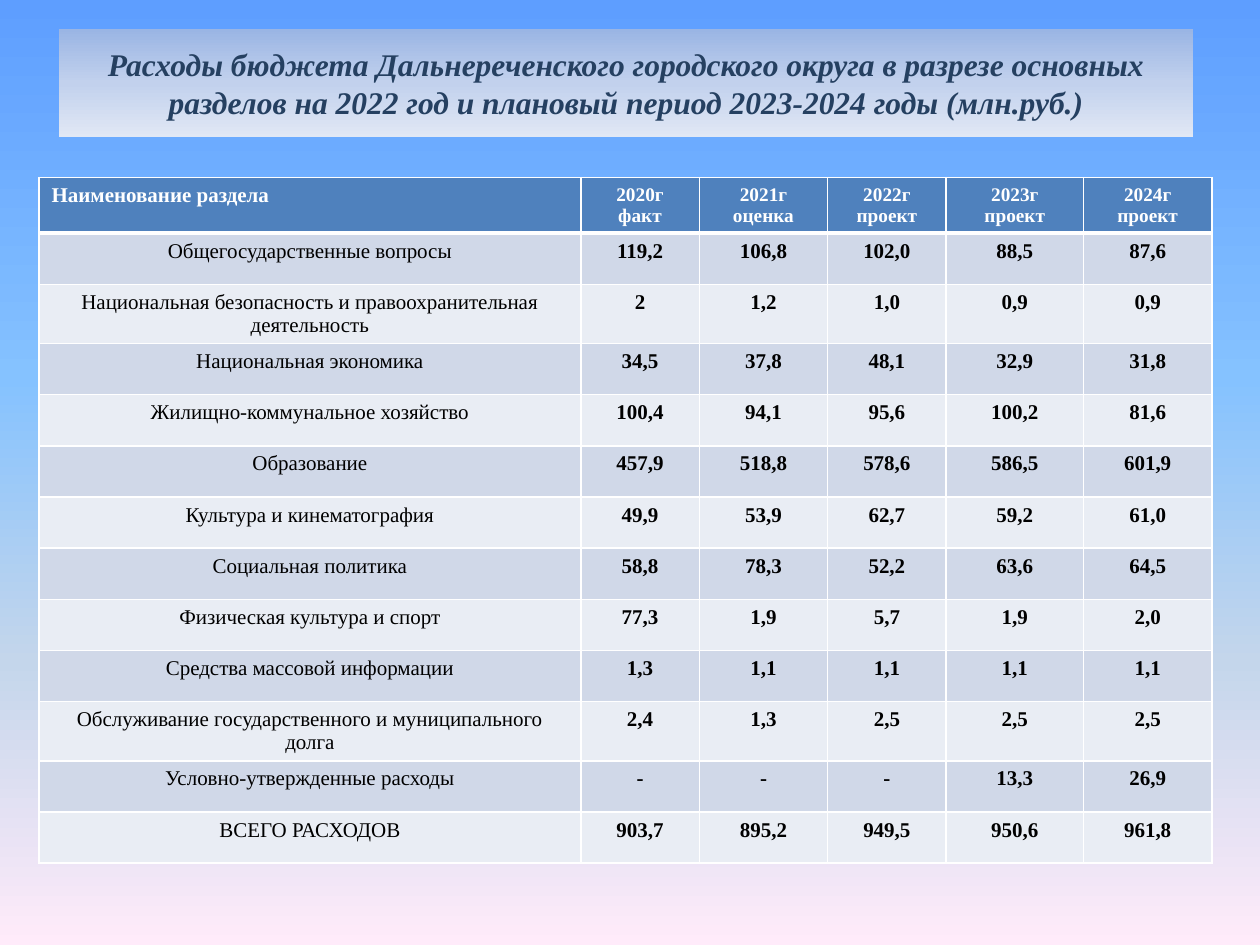
from lxml.etree import SubElement as Sub
from pptx import Presentation as Deck
from pptx.dml.color import RGBColor as Rgb
from pptx.enum.text import MSO_ANCHOR as Anchor, PP_ALIGN as Align
from pptx.oxml.ns import qn
from pptx.util import Inches, Pt

FONT = "Times New Roman"
WHITE, BLACK, NAVY, BLUE = "FFFFFF", "000000", "254061", "4F81BD"
BANDS = "D0D8E8", "E9EDF4"
SKY = (0, "5E9EFF"), (40, "85C2FF"), (70, "C4D6EB"), (100, "FFEBFA")
MIST = (0, "9AB5E4"), (50, "C2D1ED"), (100, "E1E8F5")
TITLE = ("Расходы бюджета Дальнереченского городского округа в разрезе основных "
         "разделов на 2022 год и плановый период 2023-2024 годы (млн.руб.)")
HEAD = ("Наименование раздела", "2020г факт", "2021г оценка",
        "2022г проект", "2023г проект", "2024г проект")
ROWS = (
    ("Общегосударственные вопросы", "119,2", "106,8", "102,0", "88,5", "87,6"),
    ("Национальная безопасность и правоохранительная деятельность",
     "2", "1,2", "1,0", "0,9", "0,9"),
    ("Национальная экономика", "34,5", "37,8", "48,1", "32,9", "31,8"),
    ("Жилищно-коммунальное хозяйство", "100,4", "94,1", "95,6", "100,2", "81,6"),
    ("Образование", "457,9", "518,8", "578,6", "586,5", "601,9"),
    ("Культура и кинематография", "49,9", "53,9", "62,7", "59,2", "61,0"),
    ("Социальная политика", "58,8", "78,3", "52,2", "63,6", "64,5"),
    ("Физическая культура и спорт", "77,3", "1,9", "5,7", "1,9", "2,0"),
    ("Средства массовой информации", "1,3", "1,1", "1,1", "1,1", "1,1"),
    ("Обслуживание государственного и муниципального долга",
     "2,4", "1,3", "2,5", "2,5", "2,5"),
    ("Условно-утвержденные расходы", "-", "-", "-", "13,3", "26,9"),
    ("ВСЕГО РАСХОДОВ", "903,7", "895,2", "949,5", "950,6", "961,8"),
)
WIDTHS = 43, 9.4, 10.2, 9.4, 10.9, 10.2


def tint(code):
    return Rgb.from_string(code)


class Page:
    """Holds the slide, its font and a grid of 100 columns by 75 rows."""

    def __init__(self, deck, font):
        self.slide = deck.slides.add_slide(deck.slide_layouts[5])
        self.font = font
        self.col = deck.slide_width / 100
        self.row = deck.slide_height / 75

    def box(self, x, y, w, h):
        return (round(x * self.col), round(y * self.row),
                round(w * self.col), round(h * self.row))

    def grade(self, fill, root, stops):
        fill.gradient()
        fill.gradient_angle = 270
        band = root.find(".//" + qn("a:gsLst"))
        band.clear()
        for spot, code in stops:
            stop = Sub(band, qn("a:gs"), pos=str(spot * 1000))
            Sub(stop, qn("a:srgbClr"), val=code)

    def back(self, stops):
        self.grade(self.slide.background.fill, self.slide.element, stops)

    def text(self, para, words, size, code, bold, slant=False, align=Align.CENTER):
        para.alignment = align
        run = para.add_run()
        run.text = words
        font = run.font
        font.name, font.size = self.font, Pt(size)
        font.bold, font.italic = bold, slant
        font.color.rgb = tint(code)

    def title(self, words, place, stops):
        shape = self.slide.shapes.title
        shape.left, shape.top, shape.width, shape.height = self.box(*place)
        self.grade(shape.fill, shape.element, stops)
        frame = shape.text_frame
        frame.word_wrap = True
        frame.vertical_anchor = Anchor.MIDDLE
        self.text(frame.paragraphs[0], words, 18, NAVY, True, True)

    def edge(self, cell, top, base):
        props = cell._tc.get_or_add_tcPr()
        for spot, (side, wide) in enumerate(zip("LRTB", (1, 1, top, base))):
            line = props.makeelement(qn("a:ln" + side), {"w": str(Pt(wide))})
            Sub(Sub(line, qn("a:solidFill")), qn("a:srgbClr"), val=WHITE)
            props.insert(spot, line)

    def cell(self, cell, words, row, col):
        head, name = row == 0, col == 0
        cell.fill.solid()
        cell.fill.fore_color.rgb = tint(BLUE if head else BANDS[(row - 1) % 2])
        self.edge(cell, 3 if row == 1 else 1, 3 if head else 1)
        self.text(cell.text_frame.paragraphs[0], words,
                  11 if head and not name else 12,
                  WHITE if head else BLACK, head or not name,
                  align=Align.LEFT if head and name else Align.CENTER)

    def table(self, rows, widths, x, y, high):
        place = self.box(x, y, sum(widths), high * len(rows))
        grid = self.slide.shapes.add_table(len(rows), len(widths), *place).table
        for col, wide in zip(grid.columns, widths):
            col.width = round(wide * self.col)
        for r, line in enumerate(rows):
            grid.rows[r].height = round(high * self.row)
            for c, words in enumerate(line):
                self.cell(grid.cell(r, c), words, r, c)


def main():
    deck = Deck()
    deck.slide_width, deck.slide_height = Inches(10), Inches(7.5)
    page = Page(deck, FONT)
    page.back(SKY)
    page.title(TITLE, (4.7, 2.3, 90, 8.6), MIST)
    page.table((HEAD, *ROWS), WIDTHS, 3.1, 14.1, 4.06)
    deck.save("out.pptx")


if __name__ == "__main__":
    main()
